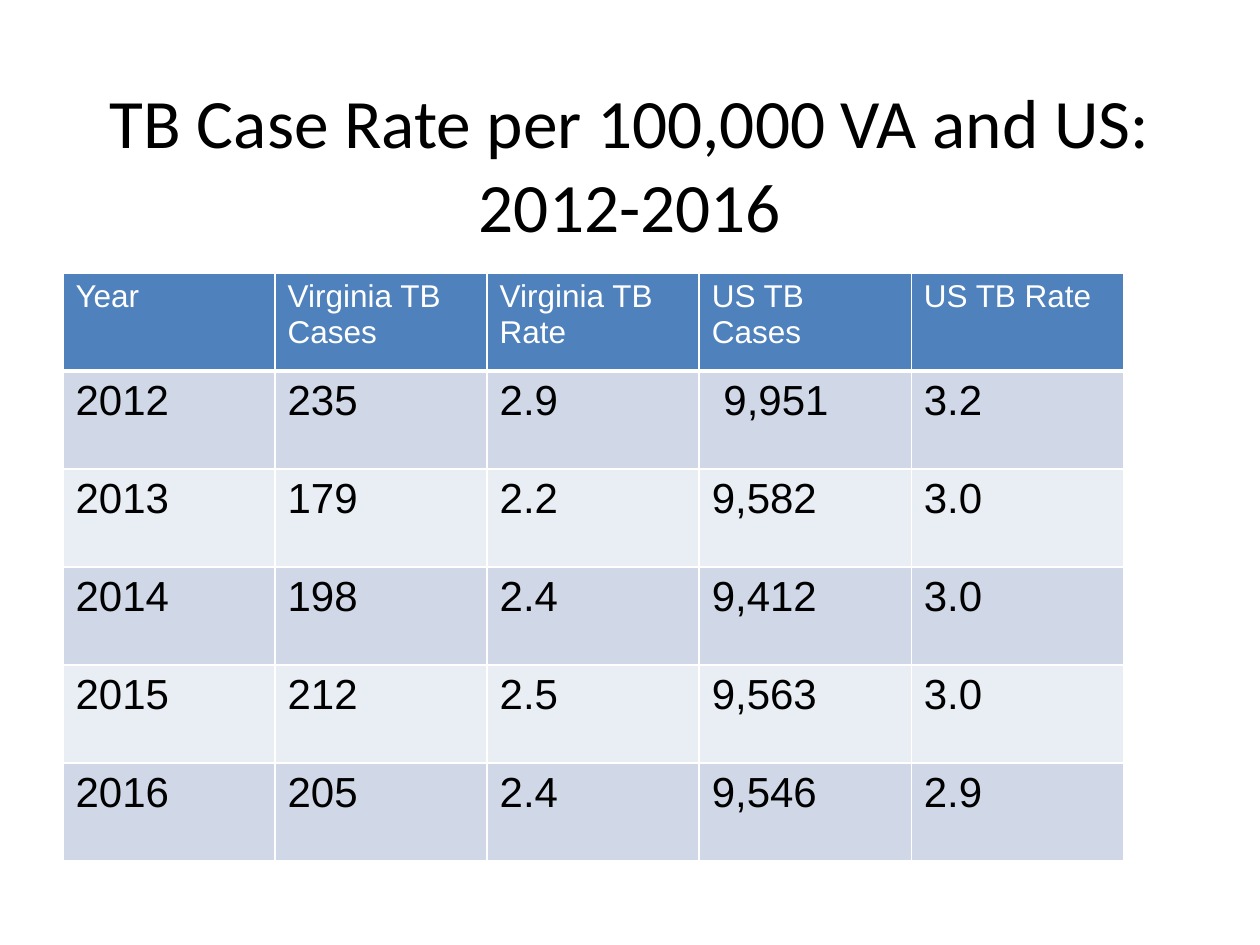
import dataclasses

import lxml.etree
import pptx
import pptx.dml.color
import pptx.enum.text
import pptx.oxml.ns
import pptx.util

Pt = pptx.util.Pt


@dataclasses.dataclass(frozen=True)
class Theme:
    title_font: str = "Calibri"
    table_font: str = "Arial"
    title_size: float = 39.6
    header_size: float = 18
    body_size: float = 24
    ink: str = "000000"
    white: str = "FFFFFF"
    header_fill: str = "4F81BD"
    band_fills: tuple = ("D0D8E8", "E9EDF4")
    border: float = 1
    header_border: float = 3


THEME = Theme()
TITLE = "TB Case Rate per 100,000 VA and US: 2012-2016"
HEADERS = ("Year", "Virginia TB Cases", "Virginia TB Rate", "US TB Cases", "US TB Rate")
RATES = (
    ("2012", "235", "2.9", " 9,951", "3.2"),
    ("2013", "179", "2.2", "9,582", "3.0"),
    ("2014", "198", "2.4", "9,412", "3.0"),
    ("2015", "212", "2.5", "9,563", "3.0"),
    ("2016", "205", "2.4", "9,546", "2.9"),
)


def format_text(frame, font, size, color):
    for paragraph in frame.paragraphs:
        for span in paragraph.runs:
            span.font.name = font
            span.font.size = Pt(size)
            span.font.bold = False
            span.font.color.rgb = pptx.dml.color.RGBColor.from_string(color)


def add_borders(cell, color, bottom_width):
    """Draw all four cell edges; the bottom one has its own width."""
    qn = pptx.oxml.ns.qn
    properties = cell._tc.get_or_add_tcPr()
    for side in ("lnL", "lnR", "lnT", "lnB"):
        width = bottom_width if side == "lnB" else THEME.border
        line = lxml.etree.SubElement(properties, qn(f"a:{side}"), w=str(Pt(width)))
        fill = lxml.etree.SubElement(line, qn("a:solidFill"))
        lxml.etree.SubElement(fill, qn("a:srgbClr"), val=color)


def place_title(page, left, top, width, height):
    title = page.shapes.title
    title.left, title.top, title.width, title.height = map(Pt, (left, top, width, height))
    frame = title.text_frame
    frame.text = TITLE
    frame.word_wrap = True
    frame.auto_size = pptx.enum.text.MSO_AUTO_SIZE.NONE
    frame.vertical_anchor = pptx.enum.text.MSO_ANCHOR.MIDDLE
    frame.paragraphs[0].alignment = pptx.enum.text.PP_ALIGN.CENTER
    format_text(frame, THEME.title_font, THEME.title_size, THEME.ink)


def place_rate_table(page, left, top, width, height):
    rows = (HEADERS, *RATES)
    table = page.shapes.add_table(
        len(rows), len(HEADERS), Pt(left), Pt(top), Pt(width), Pt(height)
    ).table
    for column in table.columns:
        column.width = Pt(width / len(HEADERS))
    for row_index, values in enumerate(rows):
        table.rows[row_index].height = Pt(height / len(rows))
        # Header row first, then alternating bands
        if row_index == 0:
            fill, color = THEME.header_fill, THEME.white
            size, bottom = THEME.header_size, THEME.header_border
        else:
            fill, color = THEME.band_fills[(row_index - 1) % 2], THEME.ink
            size, bottom = THEME.body_size, THEME.border
        for column_index, value in enumerate(values):
            cell = table.cell(row_index, column_index)
            cell.text_frame.text = value
            format_text(cell.text_frame, THEME.table_font, size, color)
            add_borders(cell, THEME.white, bottom)
            cell.fill.solid()
            cell.fill.fore_color.rgb = pptx.dml.color.RGBColor.from_string(fill)


def main():
    deck = pptx.Presentation()
    deck.slide_width, deck.slide_height = Pt(720), Pt(540)
    page = deck.slides.add_slide(deck.slide_layouts.get_by_name("Title Only"))
    place_title(page, 54, 48, 612, 90)
    place_rate_table(page, 36, 156, 606, 336)
    deck.save("out.pptx")


if __name__ == "__main__":
    main()
